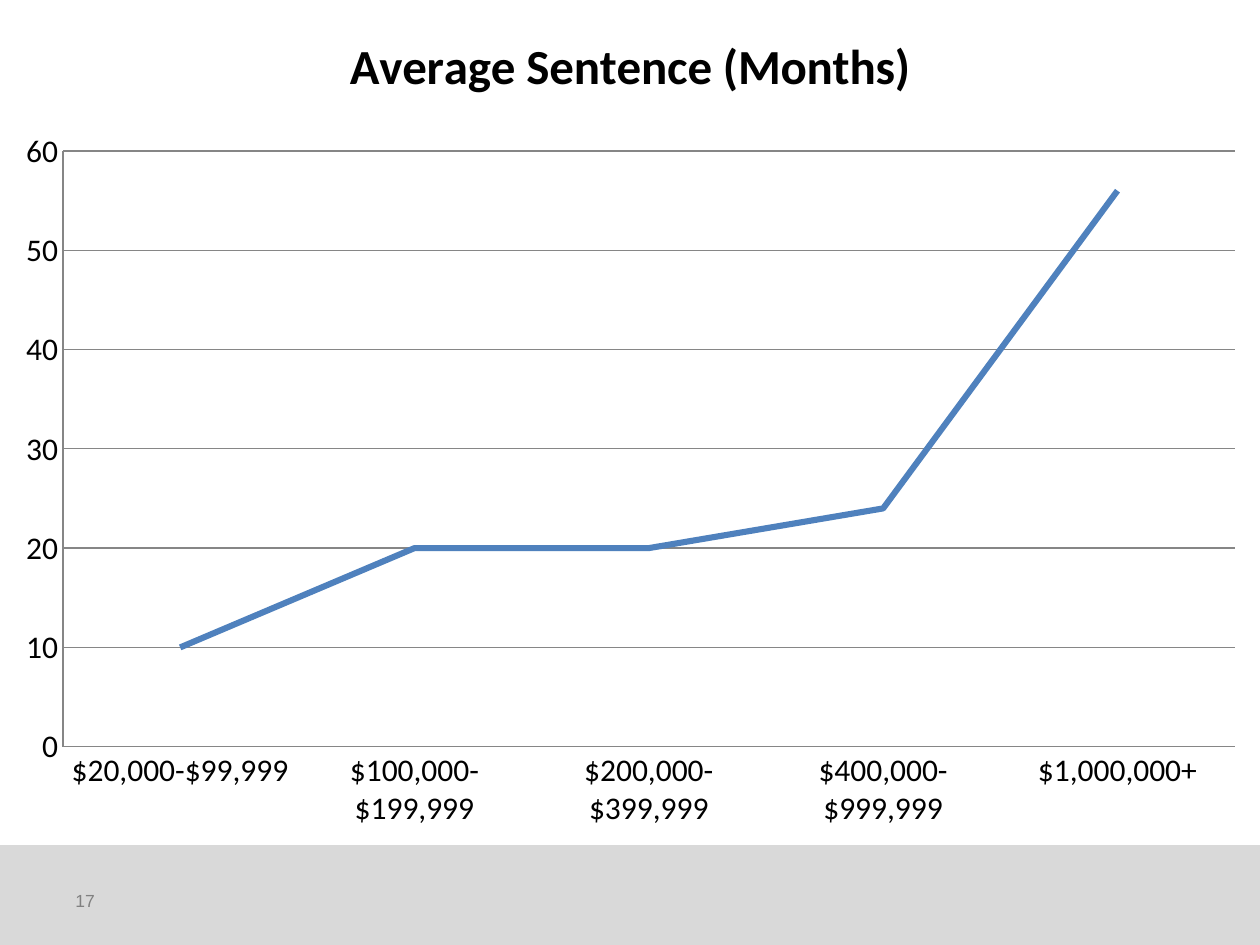
"""Build a slide with a line chart of average sentence by loss amount."""
from lxml import etree
from pptx import Presentation
from pptx.chart.data import CategoryChartData
from pptx.dml.color import RGBColor
from pptx.enum.chart import XL_CHART_TYPE, XL_MARKER_STYLE, XL_TICK_MARK
from pptx.enum.shapes import MSO_SHAPE
from pptx.enum.text import MSO_ANCHOR
from pptx.oxml import parse_xml
from pptx.oxml.ns import nsdecls, qn
from pptx.util import Pt

LINE = XL_CHART_TYPE.LINE
PLAIN = XL_MARKER_STYLE.NONE
NO_TICK = XL_TICK_MARK.NONE
RECT = MSO_SHAPE.RECTANGLE
MIDDLE = MSO_ANCHOR.MIDDLE
BLACK = RGBColor(0x00, 0x00, 0x00)
BLUE = RGBColor(0x4F, 0x81, 0xBD)
SILVER = RGBColor(0xD9, 0xD9, 0xD9)
GRAY = RGBColor(0x80, 0x80, 0x80)
RULE = RGBColor(0x86, 0x86, 0x86)
TITLE = "Average Sentence (Months)"
DATA = {
    "$20,000-$99,999": 10,
    "$100,000-$199,999": 20,
    "$200,000-$399,999": 20,
    "$400,000-$999,999": 24,
    "$1,000,000+": 56,
}
PLOT = {"x": 0.05, "y": 0.18, "w": 0.93, "h": 0.71}


def style(font, size, color=BLACK, name="Calibri", bold=False):
    form = {"size": Pt(size), "name": name, "bold": bold}
    for key, value in form.items():
        setattr(font, key, value)
    font.color.rgb = color


deck = Presentation()
deck.slide_width, deck.slide_height = Pt(720), Pt(540)
slide = deck.slides.add_slide(deck.slide_layouts[6])

band = slide.shapes.add_shape(RECT, Pt(0), Pt(483), Pt(720), Pt(57))
band.shadow.inherit = False
band.fill.solid()
band.fill.fore_color.rgb = SILVER
band.line.color.rgb = SILVER
band.line.width = Pt(0.75)

box = slide.shapes.add_textbox(Pt(36), Pt(500.5), Pt(168), Pt(28.75))
frame = box.text_frame
frame.word_wrap = True
frame.vertical_anchor = MIDDLE
frame.text = "17"
style(frame.paragraphs[0].runs[0].font, 10, GRAY, "Arial")

data = CategoryChartData()
data.categories = list(DATA)
data.add_series(TITLE, list(DATA.values()))
chart = slide.shapes.add_chart(
    LINE, Pt(0), Pt(0), Pt(720), Pt(479.5), data
).chart
style(chart.font, 10)
chart.has_legend = False
chart.has_title = True
head = chart.chart_title.text_frame
head.text = TITLE
style(head.paragraphs[0].runs[0].font, 28, bold=True)

for axis in (chart.category_axis, chart.value_axis):
    axis.major_tick_mark = NO_TICK
    axis.minor_tick_mark = NO_TICK
    axis.format.line.color.rgb = RULE
    axis.format.line.width = Pt(0.75)
    style(axis.tick_labels.font, 18)

scale = chart.value_axis
form = {"minimum_scale": 0, "maximum_scale": 60, "major_unit": 10,
        "has_major_gridlines": True}
for key, value in form.items():
    setattr(scale, key, value)
grid = scale.major_gridlines.format.line
grid.color.rgb = RULE
grid.width = Pt(0.75)

plot = chart.plots[0]
plot.vary_by_categories = False
series = plot.series[0]
series.smooth = False
series.marker.style = PLAIN
series.format.line.color.rgb = BLUE
series.format.line.width = Pt(3.5)

area = chart.element.find(".//" + qn("c:plotArea"))
for old in area.findall(qn("c:layout")):
    area.remove(old)
layout = parse_xml(f"<c:layout {nsdecls('c')}><c:manualLayout/></c:layout>")
parts = {"layoutTarget": "inner", "xMode": "edge", "yMode": "edge", **PLOT}
for tag, value in parts.items():
    etree.SubElement(layout[0], qn("c:" + tag)).set("val", str(value))
area.insert(0, layout)

deck.save("out.pptx")
